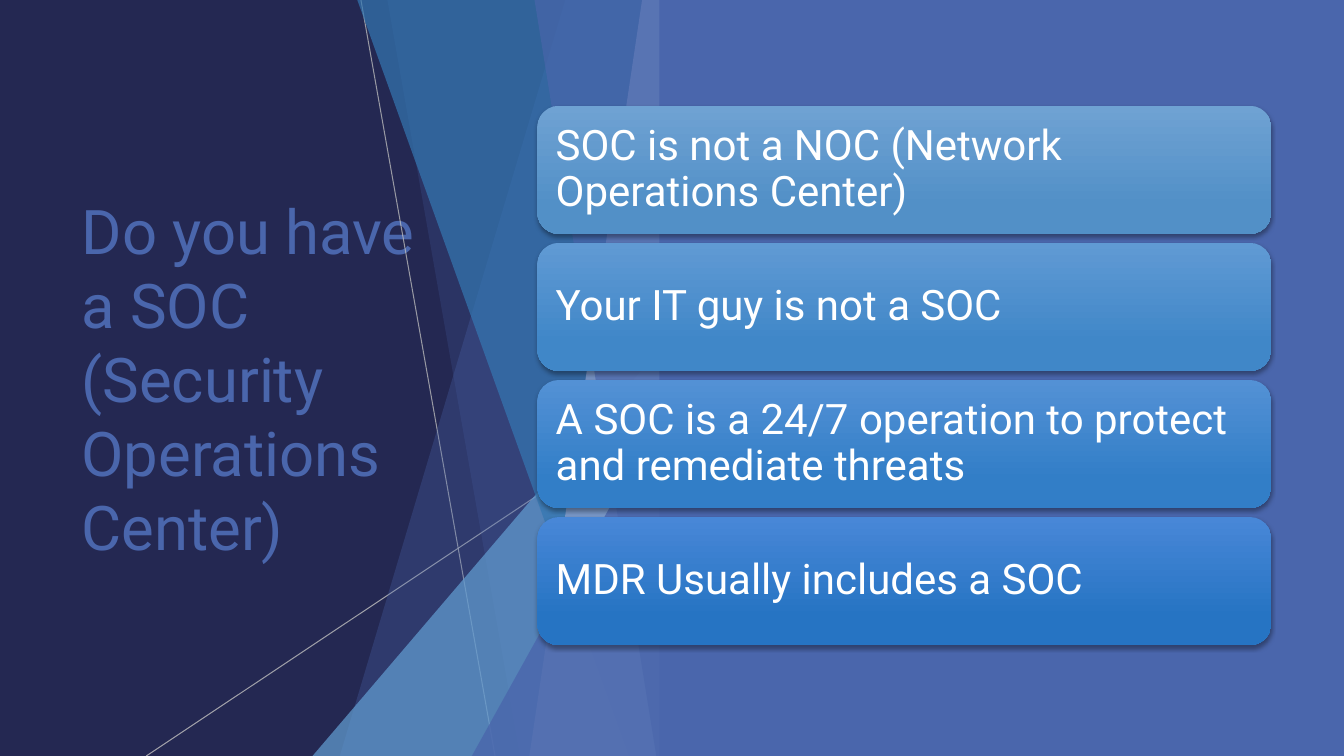
"""Build the SOC slide: a title over slanted facets and a column of statement cards."""
from dataclasses import dataclass

from pptx import Presentation
from pptx import util as u
from pptx.dml import color
from pptx.enum import shapes, text
from pptx.oxml import ns
from lxml import etree

SCALE = 9144
SLIDE_W, SLIDE_H = 1333, 750
NAVY, INDIGO, SKY, STEEL = "242852", "4A66AC", "629DD1", "3477B2"
FACET_RIGHT = 666
CARD_LEFT, CARD_TOP, CARD_W, CARD_H, CARD_PITCH = 533, 105, 728, 127, 136


@dataclass
class Ray:
    """A thin line across the facets."""
    x1: int
    y1: int
    x2: int
    y2: int
    alpha: int


@dataclass
class Facet:
    """A band from a slanted left edge to the common right edge."""
    top_x: int
    base_x: int
    fill: str
    alpha: int


@dataclass
class Wedge:
    """A right-leaning triangle standing on the slide's bottom edge."""
    left: int
    top: int
    fill: str
    alpha: int


@dataclass
class Card:
    """A statement with its gradient colours."""
    words: str
    light: str
    dark: str


RAYS = [Ray(358, 0, 491, 750, 75), Ray(666, 403, 145, 750, 80)]
FACETS = [
    Facet(561, 337, INDIGO, 30),
    Facet(384, 516, INDIGO, 20),
    Wedge(310, 333, SKY, 72),
    Facet(354, 624, STEEL, 70),
    Facet(637, 525, "90A2CF", 70),
    Facet(530, 651, INDIGO, 65),
    Wedge(468, 393, INDIGO, 80),
]
CARDS = [
    Card("SOC is not a NOC (Network Operations Center)", "6FA2D3", "5290C7"),
    Card("Your IT guy is not a SOC", "609AD4", "4087C8"),
    Card("A SOC is a 24/7 operation to protect and remediate threats", "5391D5", "327EC7"),
    Card("MDR Usually includes a SOC", "4887D7", "2674C3"),
]


def px(n: int) -> u.Emu:
    """Turn px into EMU."""
    return u.Emu(n * SCALE)


def rgb(value: str) -> color.RGBColor:
    """Turn a hex string into a colour."""
    return color.RGBColor.from_string(value)


def set_alpha(sp, percent: int) -> None:
    """Make every colour of a shape partly transparent."""
    for clr in list(sp._element.spPr.iter(ns.qn("a:srgbClr"))):
        etree.SubElement(clr, ns.qn("a:alpha"), val=str(percent * 1000))


def paint(sp, fill: str, alpha: int = 100) -> None:
    """Give a shape a flat fill with no line or shadow."""
    sp.shadow.inherit = False
    sp.fill.solid()
    sp.fill.fore_color.rgb = rgb(fill)
    sp.line.fill.background()
    if alpha < 100:
        set_alpha(sp, alpha)


def write(tf, words: str, *, size: int, colour: str, font: str = "Roboto",
          spacing: float = 1.0) -> None:
    """Write one left-aligned paragraph centred vertically."""
    tf.word_wrap = True
    tf.auto_size = text.MSO_AUTO_SIZE.NONE
    tf.vertical_anchor = text.MSO_ANCHOR.MIDDLE
    p = tf.paragraphs[0]
    p.alignment = text.PP_ALIGN.LEFT
    p.line_spacing = spacing
    r = p.add_run()
    r.text = words
    r.font.name, r.font.size = font, u.Pt(size)
    r.font.color.rgb = rgb(colour)


def draw_ray(s, ray: Ray) -> None:
    """Draw a thin grey line."""
    ln = s.shapes.add_connector(shapes.MSO_CONNECTOR.STRAIGHT, px(ray.x1), px(ray.y1),
                                px(ray.x2), px(ray.y2))
    ln.line.color.rgb = rgb("BFBFBF")
    ln.line.width = u.Pt(0.75)
    set_alpha(ln, ray.alpha)
    etree.SubElement(ln._element.spPr, ns.qn("a:effectLst"))


def draw_facet(s, facet: Facet) -> None:
    """Draw a slanted band."""
    fb = s.shapes.build_freeform(facet.top_x, -1, scale=SCALE)
    fb.add_line_segments([(FACET_RIGHT, -1), (FACET_RIGHT, SLIDE_H), (facet.base_x, SLIDE_H)])
    paint(fb.convert_to_shape(), facet.fill, facet.alpha)


def draw_wedge(s, wedge: Wedge) -> None:
    """Draw a triangle with its apex at the right."""
    sp = s.shapes.add_shape(shapes.MSO_SHAPE.ISOSCELES_TRIANGLE, px(wedge.left), px(wedge.top),
                            px(FACET_RIGHT - wedge.left), px(SLIDE_H - wedge.top))
    sp.adjustments[0] = 1
    paint(sp, wedge.fill, wedge.alpha)


def draw_card(s, card: Card, top: int) -> None:
    """Draw a rounded gradient card with a soft shadow and its statement."""
    sp = s.shapes.add_shape(shapes.MSO_SHAPE.ROUNDED_RECTANGLE, px(CARD_LEFT), px(top),
                            px(CARD_W), px(CARD_H))
    sp.line.fill.background()
    sp.fill.gradient()
    sp.fill.gradient_angle = 270
    for stop, position, colour in zip(sp.fill.gradient_stops, (0, 0.78), (card.light, card.dark)):
        stop.position = position
        stop.color.rgb = rgb(colour)
    sp.shadow.inherit = False
    effects = sp._element.spPr.find(ns.qn("a:effectLst"))
    shadow = etree.SubElement(effects, ns.qn("a:outerShdw"), blurRad=str(u.Pt(3)),
                              dist=str(u.Pt(2)), dir="5400000", rotWithShape="0")
    clr = etree.SubElement(shadow, ns.qn("a:srgbClr"), val="000000")
    etree.SubElement(clr, ns.qn("a:alpha"), val="35000")
    tf = sp.text_frame
    tf.margin_left = tf.margin_right = tf.margin_top = tf.margin_bottom = px(12)
    write(tf, card.words, size=30, colour="FFFFFF", spacing=0.9)


def main() -> None:
    """Build and save the slide."""
    prs = Presentation()
    prs.slide_width, prs.slide_height = px(SLIDE_W), px(SLIDE_H)
    s = prs.slides.add_slide(prs.slide_layouts.get_by_name("Title Only"))
    s.background.fill.solid()
    s.background.fill.fore_color.rgb = rgb(NAVY)

    title = s.shapes.title
    title.left, title.top, title.width, title.height = px(71), px(151), px(388), px(448)
    write(title.text_frame, "Do you have a SOC (Security Operations Center)",
          size=44, colour=INDIGO)

    for ray in RAYS:
        draw_ray(s, ray)
    for facet in FACETS:
        if isinstance(facet, Wedge):
            draw_wedge(s, facet)
        else:
            draw_facet(s, facet)
    panel = s.shapes.add_shape(shapes.MSO_SHAPE.RECTANGLE, px(654), 0,
                               px(SLIDE_W - 654), px(SLIDE_H))
    paint(panel, INDIGO)
    for i, card in enumerate(CARDS):
        draw_card(s, card, CARD_TOP + i * CARD_PITCH)
    prs.save("out.pptx")


if __name__ == "__main__":
    main()
